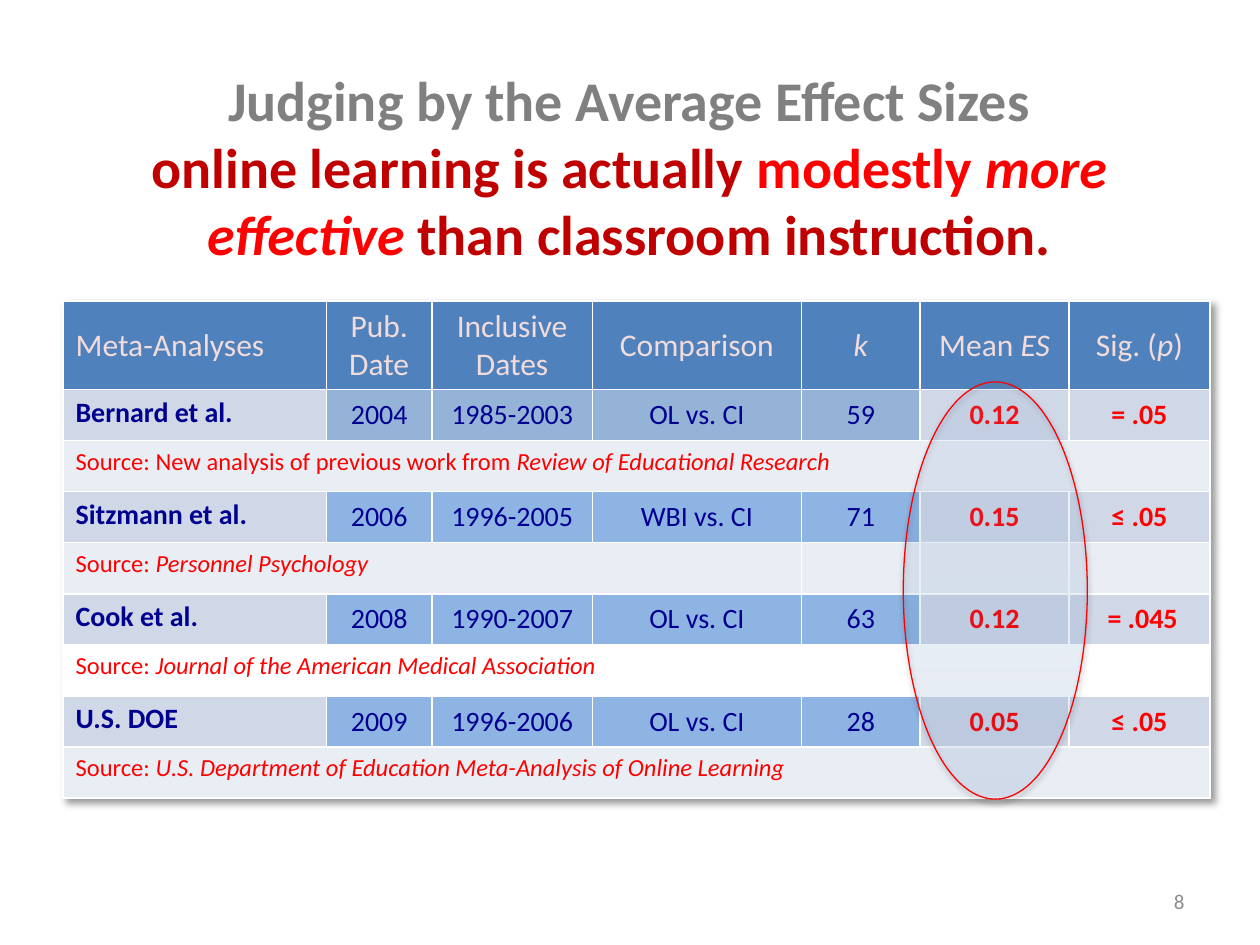
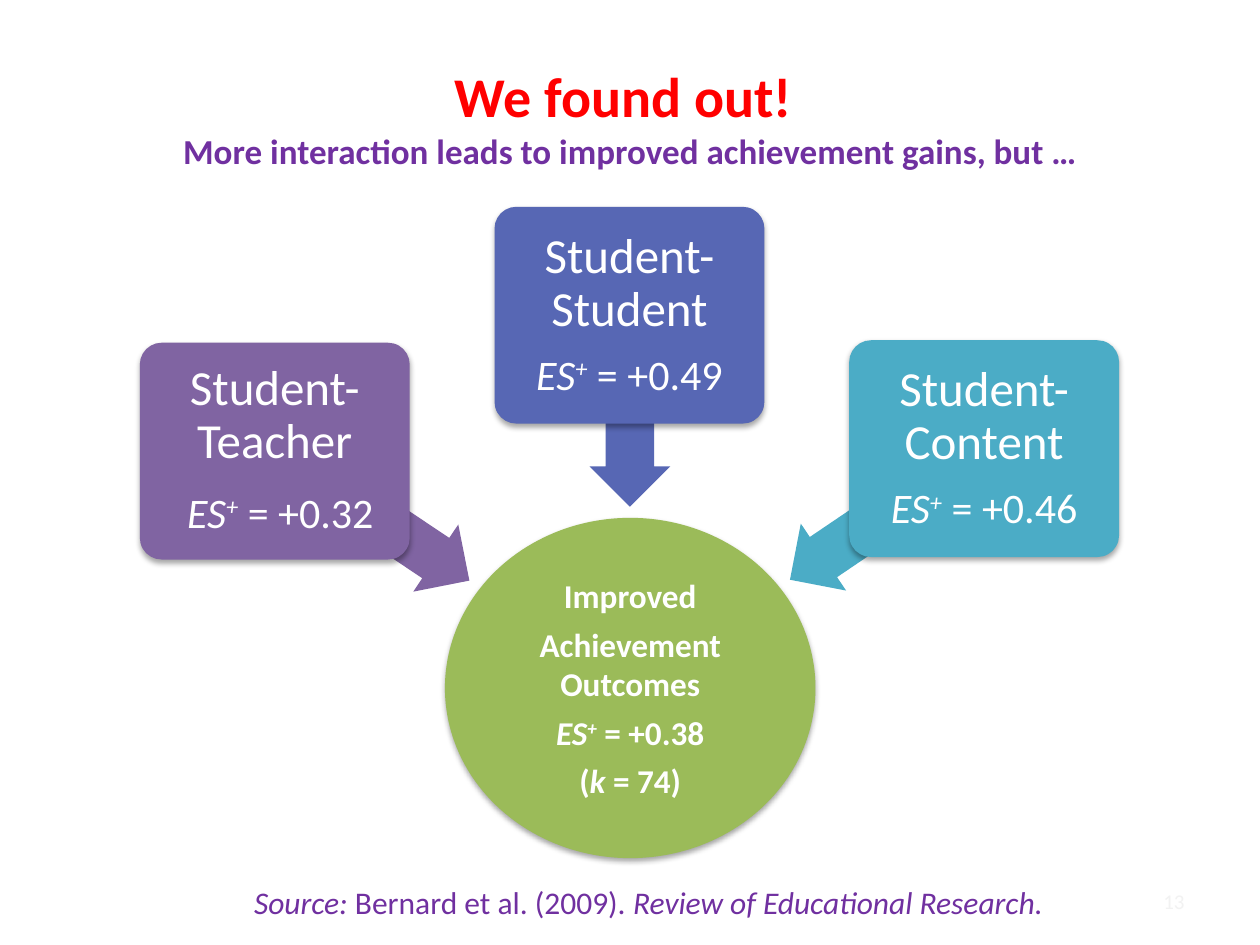
"""Build two slides on effect sizes in online learning."""
from dataclasses import dataclass

from lxml import etree
from pptx import Presentation
from pptx.dml.color import RGBColor
from pptx.enum.shapes import MSO_SHAPE
from pptx.enum.text import MSO_ANCHOR, MSO_AUTO_SIZE, PP_ALIGN
from pptx.oxml.ns import qn
from pptx.util import Cm, Pt

LEFT, CENTER, RIGHT = PP_ALIGN.LEFT, PP_ALIGN.CENTER, PP_ALIGN.RIGHT
TOP, MIDDLE = MSO_ANCHOR.TOP, MSO_ANCHOR.MIDDLE
OVAL, ROUND = MSO_SHAPE.OVAL, MSO_SHAPE.ROUNDED_RECTANGLE
ARROW = MSO_SHAPE.LEFT_ARROW
NO_FIT = MSO_AUTO_SIZE.NONE
TITLE_ONLY = 5


@dataclass(frozen=True)
class Theme:
    """Hold the colours and type sizes of the deck."""
    face: str = "Calibri"
    white: str = "FFFFFF"
    gray: str = "808080"
    page: str = "8C8C8C"
    faint: str = "F2F2F2"
    red: str = "FF0000"
    dark_red: str = "C00000"
    purple: str = "7030A0"
    navy: str = "000090"
    rose: str = "F2DCDB"
    head: str = "4F81BD"
    steel: str = "95B3D7"
    sky: str = "8EB4E3"
    band: str = "D0D8E8"
    pale: str = "E9EDF4"
    deep: str = "3F80CE"
    light: str = "A4C4FF"
    green: str = "9BBB59"
    violet: str = "8064A2"
    indigo: str = "5767B4"
    teal: str = "4BACC6"
    title_pt: int = 32
    sub_pt: int = 20
    goal_pt: int = 19
    card_pt: int = 28
    score_pt: int = 24
    head_pt: int = 18
    cell_pt: int = 16
    note_pt: int = 14
    page_pt: int = 12


T = Theme()
ITALIC = {"italic": True}
SUPER = {"italic": True, "raised": True}

HEADS = (
    [("Meta-Analyses", {})], [("Pub. Date", {})], [("Inclusive Dates", {})],
    [("Comparison", {})], [("k", ITALIC)], [("Mean ", {}), ("ES", ITALIC)],
    [("Sig. (", {}), ("p", ITALIC), (")", {})],
)
WIDTHS = (5.31, 2.13, 3.23, 4.22, 2.39, 3.0, 2.84)
STUDIES = (
    (("Bernard et al.", "2004", "1985-2003", "OL vs. CI", "59", "0.12", "= .05"), T.steel,
     "Source: New analysis of previous work from ", "Review of Educational Research", 7, T.pale),
    (("Sitzmann et al.", "2006", "1996-2005", "WBI vs. CI", "71", "0.15", "≤ .05"), T.sky,
     "Source: ", "Personnel Psychology", 4, T.pale),
    (("Cook et al.", "2008", "1990-2007", "OL vs. CI", "63", "0.12", " = .045"), T.sky,
     "Source: ", "Journal of the American Medical Association", 4, T.white),
    (("U.S. DOE", "2009", "1996-2006", "OL vs. CI", "28", "0.05", "≤ .05"), T.sky,
     "Source: ", "U.S. Department of Education Meta-Analysis of Online Learning", 7, T.pale),
)
CARDS = (
    ("Student-Teacher", [(" ", {"size": T.card_pt})], "0.32", T.violet,
     (2.82, 6.91), (5.16, 9.58, 4.7, 1.63), 213.8),
    ("Student-Student", [], "0.49", T.indigo,
     (9.97, 4.17), (10.77, 7.47, 3.86, 1.63), 270),
    ("Student-Content", [], "0.46", T.teal,
     (17.12, 6.86), (15.52, 9.55, 4.72, 1.63), 325.9),
)


def place(*sizes):
    """Turn centimetres into lengths."""
    return [Cm(size) for size in sizes]


def style(font, size=None, color=None, bold=None, italic=None):
    """Set the given traits on a font."""
    if size:
        font.size = Pt(size)
    if color:
        font.color.rgb = RGBColor.from_string(color)
    if bold is not None:
        font.bold = bold
    if italic is not None:
        font.italic = italic


def write(para, runs, size, color, bold=False, align=CENTER):
    """Fill a paragraph with runs of (text, traits)."""
    para.alignment = align
    para.font.name = T.face
    style(para.font, size, color, bold)
    for text, traits in runs:
        if text == "\n":
            para.add_line_break()
            continue
        run = para.add_run()
        run.text = text
        traits = dict(traits)
        if traits.pop("raised", False):
            run._r.get_or_add_rPr().set("baseline", "30000")
        style(run.font, **traits)


def score(value):
    """Give the runs of an effect size."""
    return [("ES", ITALIC), ("+", SUPER), (f" = +{value}", {})]


def cast(effects, blur=40000, drop=23000, turn=5400000, alpha=35000):
    """Add an outer shadow to an effect list."""
    shade = etree.SubElement(effects, qn("a:outerShdw"), blurRad=str(blur),
                             dist=str(drop), dir=str(turn), rotWithShape="0")
    black = etree.SubElement(shade, qn("a:srgbClr"), val="000000")
    etree.SubElement(black, qn("a:alpha"), val=str(alpha))


def add_form(slide, kind, box, color, shade=True):
    """Add a plain filled shape."""
    form = slide.shapes.add_shape(kind, *place(*box))
    form.fill.solid()
    form.fill.fore_color.rgb = RGBColor.from_string(color)
    form.line.fill.background()
    form.shadow.inherit = False
    if shade:
        cast(form._element.spPr.find(qn("a:effectLst")))
    return form


def add_lines(form, lines, inset, after, **look):
    """Write centred paragraphs into a shape."""
    frame = form.text_frame
    frame.word_wrap = True
    frame.vertical_anchor = MIDDLE
    frame.margin_left = frame.margin_right = Cm(inset)
    frame.margin_top = frame.margin_bottom = Cm(inset)
    for i, (runs, size) in enumerate(lines):
        para = frame.add_paragraph() if i else frame.paragraphs[0]
        para.space_after = Pt(after)
        write(para, runs, size, T.white, **look)
    return frame


def add_label(slide, box, runs, size, color, align=CENTER, anchor=TOP):
    """Add a one-line text box."""
    frame = slide.shapes.add_textbox(*place(*box)).text_frame
    frame.word_wrap = True
    frame.vertical_anchor = anchor
    write(frame.paragraphs[0], runs, size, color, align=align)


def add_slide(deck, box, runs, number, tint):
    """Add a slide with its title and page number."""
    slide = deck.slides.add_slide(deck.slide_layouts[TITLE_ONLY])
    title = slide.shapes.title
    title.left, title.top, title.width, title.height = place(*box)
    frame = title.text_frame
    frame.auto_size = NO_FIT
    frame.vertical_anchor = MIDDLE
    write(frame.paragraphs[0], runs, T.title_pt, T.red, bold=True)
    add_label(slide, (18.21, 17.65, 5.92, 1.02), [(number, {})],
              T.page_pt, tint, RIGHT, MIDDLE)
    return slide


def fill_cell(cell, fill, runs=(), size=T.cell_pt, color=T.navy,
              bold=False, align=CENTER, anchor=MIDDLE):
    """Colour a cell and write its text."""
    cell.fill.solid()
    cell.fill.fore_color.rgb = RGBColor.from_string(fill)
    cell.vertical_anchor = anchor
    if runs:
        write(cell.text_frame.paragraphs[0], runs, size, color, bold, align)


def add_study(table, row, study):
    """Fill the data row and source row of a study."""
    values, fill, lead, source, span, base = study
    for col, value in enumerate(values):
        cell, runs = table.cell(row, col), [(value, {})]
        if col == 0:
            fill_cell(cell, T.band, runs, bold=True, align=LEFT, anchor=TOP)
        elif col < 5:
            fill_cell(cell, fill, runs)
        else:
            fill_cell(cell, T.band, runs, color=T.red, bold=True)
    first = table.cell(row + 1, 0)
    first.merge(table.cell(row + 1, span - 1))
    fill_cell(first, base, [(lead, {}), (source, ITALIC)], T.note_pt, T.red,
              align=LEFT, anchor=TOP)
    for col in range(span, len(values)):
        fill_cell(table.cell(row + 1, col), base)


def add_grid(slide):
    """Add the table of studies."""
    count = 1 + 2 * len(STUDIES)
    box = place(1.27, 6.07, sum(WIDTHS), 10.02)
    table = slide.shapes.add_table(count, len(WIDTHS), *box).table
    for col, width in zip(table.columns, WIDTHS):
        col.width = Cm(width)
    for i, row in enumerate(table.rows):
        row.height = Cm(1.03 if i else 1.78)
    for col, runs in enumerate(HEADS):
        fill_cell(table.cell(0, col), T.head, runs, T.head_pt, T.rose,
                  align=CENTER if col else LEFT)
    for i, study in enumerate(STUDIES):
        add_study(table, 1 + 2 * i, study)
    effects = etree.Element(qn("a:effectLst"))
    table._tbl.tblPr.insert(0, effects)
    cast(effects, 50800, 38100, 2700000, 40000)


def add_ring(slide):
    """Ring the column of mean effect sizes."""
    ring = add_form(slide, OVAL, (18.21, 7.7, 3.71, 8.41), T.light)
    ring.fill.gradient()
    ring.fill.gradient_angle = 90
    for stop, color in zip(ring.fill.gradient_stops, (T.deep, T.light)):
        stop.color.rgb = RGBColor.from_string(color)
    grad = ring._element.spPr.find(qn("a:gradFill"))
    for tint in grad.iter(qn("a:srgbClr")):
        etree.SubElement(tint, qn("a:alpha"), val="9000")
    ring.line.color.rgb = RGBColor.from_string(T.red)
    ring.line.width = Pt(0.75)


def add_goal(slide):
    """Add the circle of improved outcomes."""
    goal = add_form(slide, OVAL, (8.97, 10.44, 7.47, 6.86), T.green)
    lines = ([("Improved", {})], [("Achievement Outcomes", {})], score("0.38"),
             [("(", {}), ("k ", ITALIC), ("= 74)", {})])
    add_lines(goal, [(runs, T.goal_pt) for runs in lines], 0.03, 4.9, bold=True)


def add_card(slide, name, lead, value, color, spot, path_box, turn):
    """Add a card and the arrow that leaves it."""
    arrow = add_form(slide, ARROW, path_box, color, shade=False)
    arrow.adjustments[0], arrow.adjustments[1] = 0.6, 0.5
    arrow.rotation = turn
    card = add_form(slide, ROUND, (*spot, 5.44, 4.37), color)
    card.adjustments[0] = 0.1
    lines = [([(name, {})], T.card_pt), (lead + score(value), T.score_pt)]
    for para in add_lines(card, lines, 0.15, 9.8).paragraphs:
        para.line_spacing = 0.9


def main():
    """Build and save the deck."""
    deck = Presentation()
    deck.slide_width, deck.slide_height = place(25.4, 19.05)

    dark = {"color": T.dark_red}
    slide = add_slide(deck, (1.14, 1.4, 23.09, 3.89), [
        ("Judging by the Average Effect Sizes", {"color": T.gray}), ("\n", {}),
        ("online learning is actually ", dark), ("modestly ", {}),
        ("more effective ", ITALIC), ("than classroom instruction.", dark),
    ], "8", T.page)
    add_grid(slide)
    add_ring(slide)

    slide = add_slide(deck, (1.27, 0.76, 22.86, 3.18), [
        ("We found out! ", {}), ("\n", {}),
        ("More interaction leads to improved achievement gains, but …",
         {"size": T.sub_pt, "color": T.purple}),
    ], "13", T.faint)
    add_goal(slide)
    for card in CARDS:
        add_card(slide, *card)
    add_label(slide, (2.79, 17.68, 20.57, 1.02), [
        ("Source: ", ITALIC), ("Bernard et al. (2009). ", {}),
        ("Review of Educational Research.", ITALIC),
    ], T.head_pt, T.purple)
    deck.save("out.pptx")


if __name__ == "__main__":
    main()
